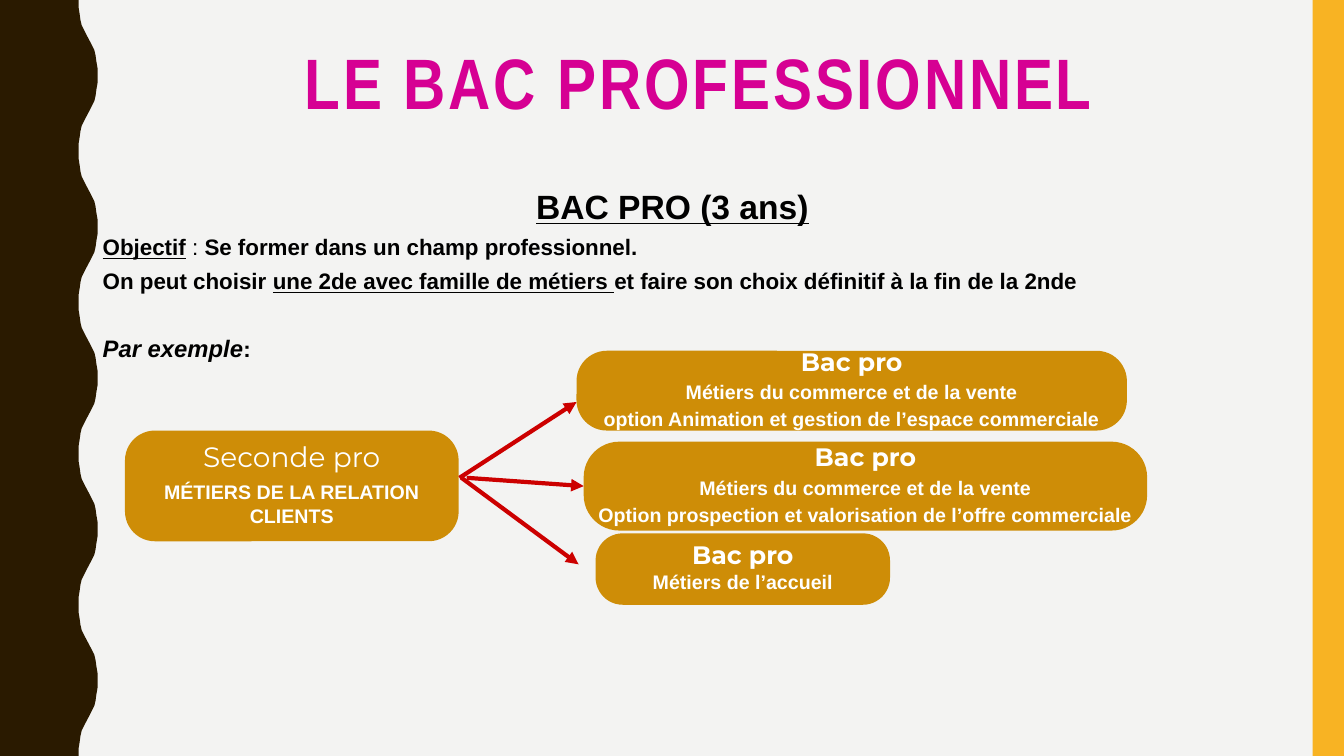
from lxml import etree
from pptx import Presentation
from pptx.dml.color import RGBColor
from pptx.enum.shapes import MSO_CONNECTOR, MSO_SHAPE
from pptx.enum.text import MSO_ANCHOR, PP_ALIGN
from pptx.oxml.ns import qn
from pptx.util import Cm, Pt

STRAIGHT = MSO_CONNECTOR.STRAIGHT
RECTANGLE, ROUNDED = MSO_SHAPE.RECTANGLE, MSO_SHAPE.ROUNDED_RECTANGLE
TOP, MIDDLE = MSO_ANCHOR.TOP, MSO_ANCHOR.MIDDLE
LEFT, CENTER = PP_ALIGN.LEFT, PP_ALIGN.CENTER
WIDTH, HEIGHT = 33.87, 19.05
BROWN, YELLOW, GOLD, RED = "2A1A00", "F8B323", "CE8D07", "CC0000"
PAPER, PINK, BLACK, WHITE = "F3F3F2", "D60093", "000000", "FFFFFF"


def color(value):
    return RGBColor.from_string(value)


def paint(shape, fill):
    shape.shadow.inherit = False
    shape.fill.solid()
    shape.fill.fore_color.rgb = color(fill)
    shape.line.fill.background()


def set_frame(frame, anchor, wrap):
    frame.vertical_anchor = anchor
    frame.word_wrap = wrap


def write(frame, paragraphs, ink):
    for index, (layout, spans) in enumerate(paragraphs):
        para = frame.paragraphs[0] if index == 0 else frame.add_paragraph()
        for name, value in layout.items():
            setattr(para, name, value)
        for text, style in spans:
            span = para.add_run()
            span.text = text
            span.font.color.rgb = color(ink)
            for name, value in style.items():
                setattr(span.font, name, value)


def add_wave(page, near, far):
    half = HEIGHT / 10
    quarter = [(near, 0), (near, 0.18), (2.01, 0.36), (2.03, 0.51),
               (2.06, 0.64), (2.11, 0.74), (2.16, 0.84)]
    mirrored = [(near + far - x, half - y) for x, y in reversed(quarter)]
    rise = quarter + mirrored
    fall = [(x, 2 * half - y) for x, y in reversed(rise)]
    edge = [(Cm(x), Cm(y + 2 * half * period))
            for period in range(5) for x, y in rise + fall]
    outline = page.shapes.build_freeform(0, 0)
    outline.add_line_segments(edge + [(0, Cm(HEIGHT))], close=True)
    paint(outline.convert_to_shape(), BROWN)


def add_side_band(page, width):
    band = page.shapes.add_shape(
        RECTANGLE, Cm(WIDTH - width), 0, Cm(width), Cm(HEIGHT))
    paint(band, YELLOW)


def add_title(page, box):
    title = page.shapes.add_textbox(*map(Cm, box))
    set_frame(title.text_frame, TOP, True)
    style = {"size": Pt(51), "name": "Arial Narrow", "bold": True}
    layout = {"alignment": CENTER, "line_spacing": 0.9}
    write(title.text_frame, [(layout, [("LE BAC PROFESSIONNEL", style)])], PINK)
    title.text_frame.paragraphs[0].runs[0].font._element.set("spc", "200")


def add_body(page, box):
    body = page.shapes.add_textbox(*map(Cm, box))
    set_frame(body.text_frame, TOP, True)
    plain = {"size": Pt(16), "name": "Arial"}
    bold = {**plain, "bold": True}
    underlined = {**bold, "underline": True}
    line = {"alignment": LEFT, "space_before": Pt(5)}
    write(body.text_frame, [
        ({"alignment": CENTER},
         [("BAC PRO (3 ans)", {**underlined, "size": Pt(24)})]),
        (line, [("Objectif", underlined), (" : ", plain),
                ("Se former dans un champ professionnel.", bold)]),
        (line, [("On peut choisir ", bold),
                ("une 2de avec famille de métiers ", underlined),
                ("et faire son choix définitif à la fin de la 2nde", bold)]),
        ({**line, "space_before": Pt(28)},
         [("Par exemple", {**bold, "size": Pt(17), "italic": True}),
          (":", bold)]),
    ], BLACK)


def add_card(page, box, rounding, heading, heading_style, details, spacing, gap=0):
    card = page.shapes.add_shape(ROUNDED, *map(Cm, box))
    card.adjustments[0] = rounding
    paint(card, GOLD)
    set_frame(card.text_frame, MIDDLE, False)
    detail_style = {"size": Pt(14), "name": "Arial", "bold": True}
    paragraphs = [({"alignment": CENTER, "line_spacing": 0.85},
                   [(heading, {"name": "Montserrat", **heading_style})])]
    for index, detail in enumerate(details):
        layout = {"alignment": CENTER, "line_spacing": spacing,
                  "space_before": Pt(0 if index else gap)}
        paragraphs.append((layout, [(detail, detail_style)]))
    write(card.text_frame, paragraphs, WHITE)
    return card


def add_arrow(page, start, end):
    arrow = page.shapes.add_connector(STRAIGHT, *map(Cm, start + end))
    arrow.line.color.rgb = color(RED)
    arrow.line.width = Pt(3)
    etree.SubElement(arrow.line._get_or_add_ln(), qn("a:tailEnd"), type="triangle")
    etree.SubElement(arrow._element.spPr, qn("a:effectLst"))
    return arrow


def add_pathways(page, left, top):
    def place(x, y, *size):
        return (left + x, top + y, *size)

    add_card(page, place(0, 2.01, 8.41, 2.79), 0.27, "Seconde pro",
             {"size": Pt(20)}, ["MÉTIERS DE LA RELATION", "CLIENTS"], 1.0, 5)
    arrows = [add_arrow(page, place(x, 3.2), place(*end)) for x, end in [
        (8.43, (11.38, 1.29)), (8.61, (11.56, 3.3)), (8.48, (11.43, 5.38))]]
    bac_style = {"size": Pt(18), "bold": True}
    trade = "Métiers du commerce et de la vente"
    cards = [add_card(page, place(*box), rounding, "Bac pro", bac_style,
                      details, spacing)
             for box, rounding, details, spacing in [
        ((11.38, 0, 13.87, 2.01), 0.38,
         [trade, "option Animation et gestion de l’espace commerciale"], 1.15),
        ((11.56, 2.29, 14.2, 2.24), 0.4,
         [trade, "Option prospection et valorisation de l’offre commerciale"], 1.15),
        ((11.86, 4.6, 7.42, 1.8), 0.38, ["Métiers de l’accueil"], 1.0)]]
    arrows[1].end_connect(cards[1], 1)


def main():
    deck = Presentation()
    deck.slide_width, deck.slide_height = Cm(WIDTH), Cm(HEIGHT)
    page = deck.slides.add_slide(deck.slide_layouts[6])
    page.background.fill.solid()
    page.background.fill.fore_color.rgb = color(PAPER)
    add_wave(page, 1.98, 2.46)
    add_side_band(page, 0.79)
    add_title(page, (3.48, 1.07, 28.27, 4.14))
    add_body(page, (2.34, 4.57, 29.21, 13.54))
    add_pathways(page, 3.15, 8.84)
    deck.save("out.pptx")


if __name__ == "__main__":
    main()
